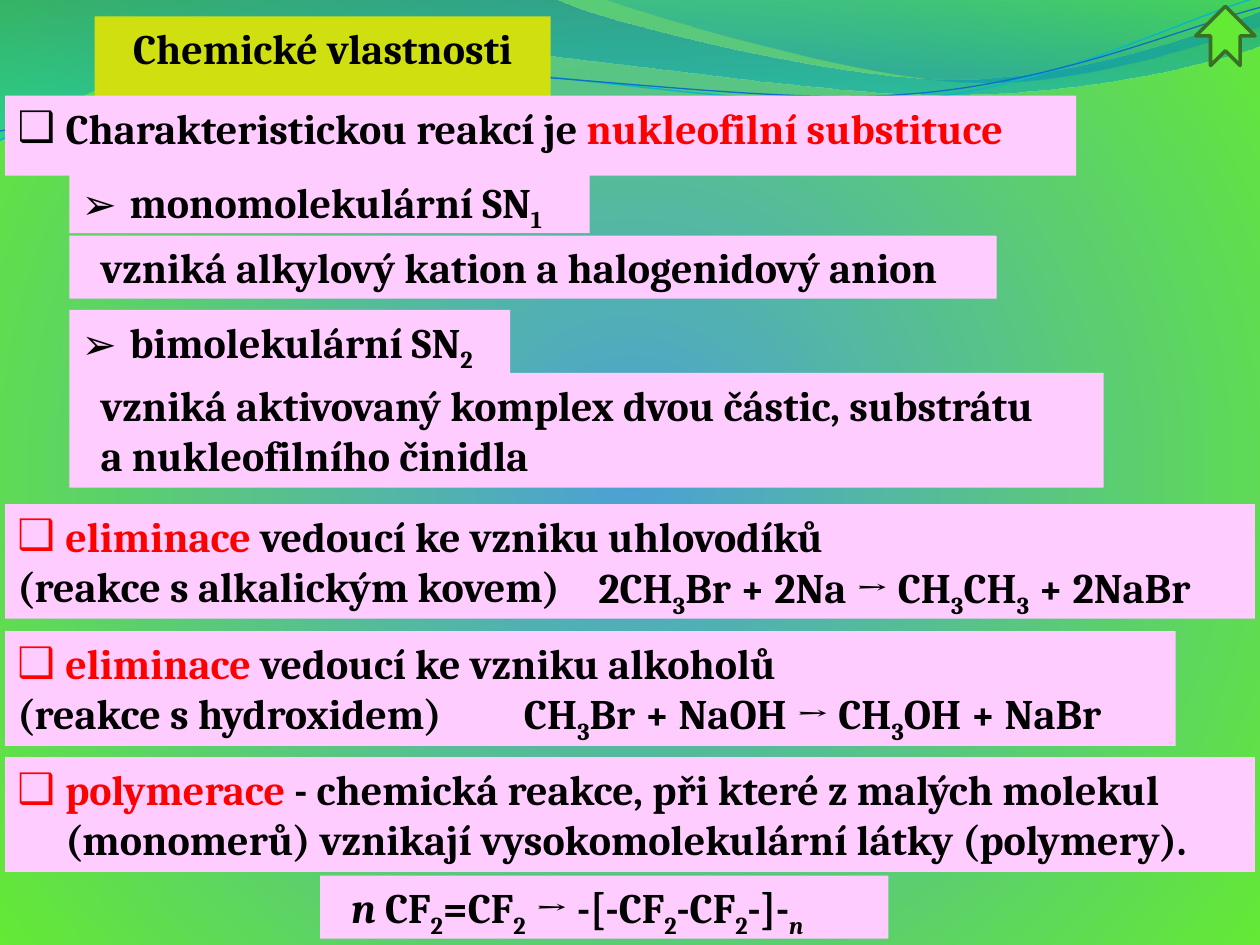
import math
from dataclasses import dataclass

from lxml import etree
from pptx import Presentation
from pptx import util as u
from pptx.dml.color import RGBColor
from pptx.enum import shapes, text
from pptx.oxml import parse_xml
from pptx.oxml.ns import nsdecls, qn

COLS, ROWS = 100, 75
UNIT = u.Inches(10) // COLS
ONE, TWO = 5, 9.1
EDGE, INSET = 0.4, 5.5
TILT = 2.7


@dataclass(frozen=True)
class Theme:
    font: str = "Cambria"
    size: int = 24
    ink: str = "000000"
    accent: str = "FF0000"
    panel: str = "FFCCFF"
    title: str = "D0DF0F"
    green: str = "64E935"
    blue: str = "4CA0D6"
    rim: str = "387026"
    deep: tuple = ((0, "0074A1", 45), (100, "00C6CF", 55))
    light: tuple = ((0, "00A1A9", 30), (80, "008BBF", 45))
    teal: str = "0AB8BF"
    navy: str = "0F6FC6"


T = Theme()

WAVE = [(0, 0), (4.4, -0.01), (4.76, 0.17, 6.64, 0.63, 7.58, 0.63),
        (8.53, 0.63, 9.58, 0.26, 10, 0.09), (10.01, 0.36),
        (9.83, 0.44, 8.7, 0.76, 7.46, 0.75),
        (6.22, 0.75, 3.82, 0.28, 2.57, 0.34),
        (1.29, 0.36, 0.46, 0.83, -0.01, 1.13), (0, 0)]
CREST = [(4.79, -0.01), (5.09, 0.11, 6.82, 0.62, 7.69, 0.65),
         (8.56, 0.69, 9.61, 0.32, 10, 0.21), (10, 0), (4.79, -0.01)]
UPPER = [(0, 1.11), (0.48, 0.93, 1.58, 0.57, 2.77, 0.52),
         (3.95, 0.47, 5.93, 0.89, 7.13, 0.8),
         (8.33, 0.71, 9.38, 0.15, 9.98, -0.02)]
LOWER = [(0, 1.04), (0.47, 0.96, 1.64, 0.61, 2.83, 0.56),
         (4.03, 0.51, 5.97, 0.84, 7.17, 0.75),
         (8.36, 0.67, 9.41, 0.21, 10, 0.06)]


def rgb(code):
    return RGBColor.from_string(code)


def area(*cells):
    return [round(c * UNIT) for c in cells]


def blend(stops, shade):
    marks = "".join(
        f'<a:gs pos="{pos * 1000}"><a:srgbClr val="{code}">'
        f'<a:alpha val="{alpha * 1000}"/></a:srgbClr></a:gs>'
        for pos, code, alpha in stops)
    return parse_xml(f'<a:gradFill {nsdecls("a")} rotWithShape="1">'
                     f'<a:gsLst>{marks}</a:gsLst>{shade}</a:gradFill>')


def paint(slide):
    slide.background.fill.solid()
    props = slide.element.find(".//" + qn("p:bgPr"))
    shade = ('<a:path path="circle"><a:fillToRect l="50000" t="50000" '
             'r="50000" b="50000"/></a:path>')
    stops = ((0, T.blue, 100), (100, T.green, 100))
    props.replace(props[0], blend(stops, shade))


def turn(curve, angle, hub):
    sin, cos = math.sin(math.radians(angle)), math.cos(math.radians(angle))

    def spin(x, y):
        dx, dy = x - hub[0], y - hub[1]
        return hub[0] + dx * cos - dy * sin, hub[1] + dx * sin + dy * cos

    return [sum((spin(*part[i:i + 2]) for i in range(0, len(part), 2)), ())
            for part in curve]


def outline(slide, curve):
    first, *rest = [(part[i] * 1000, part[i + 1] * 1000)
                    for part in curve for i in range(0, len(part), 2)]
    pen = slide.shapes.build_freeform(*first, scale=u.Inches(1) / 1000)
    pen.add_line_segments(rest, close=curve[0] == curve[-1])
    shape = pen.convert_to_shape()
    shape.shadow.inherit = False
    lines = iter(shape.element.findall(".//" + qn("a:lnTo")))
    for part in curve[1:]:
        line = next(lines)
        if len(part) == 6:
            line.addprevious(bend := etree.Element(qn("a:cubicBezTo")))
            for item in (line, next(lines), next(lines)):
                bend.append(item[0])
                item.getparent().remove(item)
    return shape


def band(slide, curve, stops):
    shape = outline(slide, curve)
    shape.line.fill.background()
    shape.fill.solid()
    props = shape.element.spPr
    old = props.find(qn("a:solidFill"))
    props.replace(old, blend(stops, '<a:lin ang="5400000" scaled="1"/>'))


def strand(slide, curve, hub, color, width):
    shape = outline(slide, turn(curve, TILT, hub))
    shape.rotation = 360 - TILT
    shape.fill.background()
    shape.line.color.rgb = rgb(color)
    shape.line.width = u.Pt(width)


def mark(para, char, indent):
    props = para._p.get_or_add_pPr()
    hang = u.Inches(0.38) if char else 0
    props.set("marL", str(hang or u.Inches(indent)))
    props.set("indent", str(-hang))
    if char:
        etree.SubElement(props, qn("a:buFont")).set("typeface", "Arial")
        etree.SubElement(props, qn("a:buChar")).set("char", char)
    else:
        etree.SubElement(props, qn("a:buNone"))


def write(shape, lines, bullet="", indent=0, align=text.PP_ALIGN.LEFT):
    frame = shape.text_frame
    frame.word_wrap = True
    frame.auto_size = text.MSO_AUTO_SIZE.SHAPE_TO_FIT_TEXT
    frame.vertical_anchor = text.MSO_ANCHOR.TOP
    for row, line in enumerate(lines):
        para = frame.add_paragraph() if row else frame.paragraphs[0]
        para.alignment = align
        para.space_before = para.space_after = u.Pt(0)
        para.line_spacing = 1.0
        mark(para, "" if row else bullet, indent)
        font = para.font
        font.name, font.size, font.bold = T.font, u.Pt(T.size), True
        for piece in line.split("|"):
            run = para.add_run()
            run.text = piece.lstrip("!_/")
            flags = piece[:len(piece) - len(run.text)]
            run.font.color.rgb = rgb(T.accent if "!" in flags else T.ink)
            if "/" in flags:
                run.font.italic = True
            if "_" in flags:
                run.font._element.set("baseline", "-25000")


def panel(slide, box, lines, **style):
    shape = slide.shapes.add_shape(shapes.MSO_SHAPE.RECTANGLE, *area(*box))
    shape.shadow.inherit = False
    shape.line.fill.background()
    shape.fill.solid()
    shape.fill.fore_color.rgb = rgb(T.panel)
    write(shape, lines, **style)


def holder(slide, index, box, color, lines, **style):
    shape = slide.placeholders[index]
    shape.left, shape.top, shape.width, shape.height = area(*box)
    shape.fill.solid()
    shape.fill.fore_color.rgb = rgb(color)
    write(shape, lines, **style)
    slide.shapes._spTree.append(shape.element)


def label(slide, box, line):
    write(slide.shapes.add_textbox(*area(*box)), [line])


def arrow(slide, box):
    shape = slide.shapes.add_shape(shapes.MSO_SHAPE.NOTCHED_RIGHT_ARROW,
                                   *area(*box))
    shape.rotation = 270
    shape.shadow.inherit = False
    shape.fill.solid()
    shape.fill.fore_color.rgb = rgb(T.green)
    shape.line.color.rgb = rgb(T.rim)
    shape.line.width = u.Pt(2)


def main():
    deck = Presentation()
    deck.slide_width, deck.slide_height = area(COLS, ROWS)
    slide = deck.slides.add_slide(deck.slide_layouts[1])
    paint(slide)
    band(slide, WAVE, T.deep)
    band(slide, CREST, T.light)
    strand(slide, UPPER, (4.99, 0.57), T.teal, 0.85)
    strand(slide, LOWER, (5, 0.59), T.navy, 0.75)

    holder(slide, 0, (7.5, 1.3, 36.2, ONE), T.title,
           ["Chemické vlastnosti"], align=text.PP_ALIGN.CENTER)
    holder(slide, 1, (EDGE, 7.6, 85, ONE), T.panel,
           ["Charakteristickou reakcí je |!nukleofilní substituce"], bullet="❑")
    for top, wide, line in ((13.5, 41.3, "monomolekulární SN|_1"),
                            (24.6, 35, "bimolekulární SN|_2")):
        panel(slide, (INSET, top, wide, ONE), [line], bullet="➢")
    panel(slide, (INSET, 18.7, 73.6, ONE),
          ["vzniká alkylový kation a halogenidový anion"], indent=0.15)
    panel(slide, (INSET, 29.6, 82.1, TWO),
          ["vzniká aktivovaný komplex dvou částic, substrátu",
           "a nukleofilního činidla"], indent=0.15)
    for top, wide, lines in (
            (40, 99.2, ["!eliminace| vedoucí ke vzniku uhlovodíků",
                        "(reakce s alkalickým kovem)"]),
            (50.1, 92.9, ["!eliminace| vedoucí ke vzniku alkoholů",
                          "(reakce s hydroxidem)"]),
            (60.1, 99.2, ["!polymerace| - chemická reakce, při které z malých "
                          "molekul (monomerů) vznikají vysokomolekulární "
                          "látky (polymery)."])):
        panel(slide, (EDGE, top, wide, TWO), lines, bullet="❑")
    panel(slide, (25.4, 69.5, 45.1, ONE),
          ["/n| CF|_2|=CF|_2| → -[-CF|_2|-CF|_2|-]-|_/n"], indent=0.15)
    label(slide, (46.5, 44.1, 53.3, ONE),
          "2CH|_3|Br + 2Na → CH|_3|CH|_3| + 2NaBr")
    label(slide, (40.6, 54.1, 53.5, ONE), "CH|_3|Br + NaOH → CH|_3|OH + NaBr")
    arrow(slide, (94.9, 0.5, 4.7, 4.7))
    deck.save("out.pptx")


if __name__ == "__main__":
    main()
